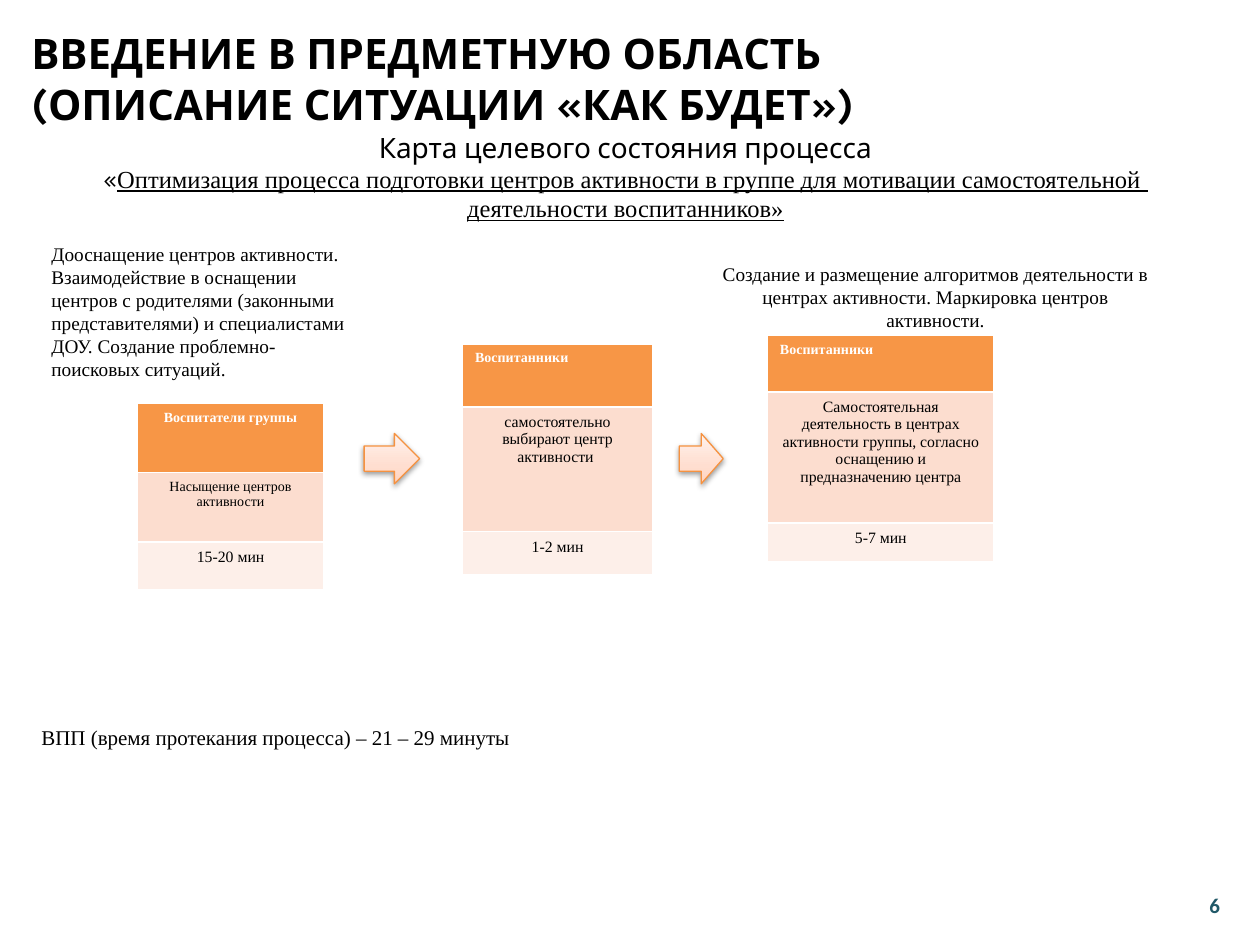
from dataclasses import dataclass

from lxml.etree import SubElement
from pptx import Presentation
from pptx.dml.color import RGBColor
from pptx.enum.shapes import MSO_SHAPE
from pptx.enum.text import MSO_ANCHOR, MSO_AUTO_SIZE, PP_ALIGN
from pptx.oxml.ns import qn
from pptx.util import Inches, Pt


@dataclass(frozen=True)
class Theme:
    heading_font: str = "Karla"
    body_font: str = "Times New Roman"
    number_font: str = "Calibri"
    text: str = "000000"
    header_text: str = "FFFFFF"
    number: str = "215968"
    row_fills: tuple = ("F79646", "FCDDCF", "FDEFE9")
    arrow_line: str = "F69240"
    arrow_stops: tuple = ((0, "FFD2BD"), (35, "FFDED0"), (100, "FFF2ED"))
    heading_size: int = 24
    title_size: int = 16
    process_size: int = 14
    total_size: int = 12
    note_size: int = 11
    cell_size: int = 9
    small_size: int = 8


THEME = Theme()
LEFT, CENTER = PP_ALIGN.LEFT, PP_ALIGN.CENTER


def inches(box):
    return [Inches(length) for length in box]


def format_run(run, size, font=THEME.body_font, color=THEME.text, bold=False, underline=None):
    run.font.size = Pt(size)
    run.font.name = font
    run.font.color.rgb = RGBColor.from_string(color)
    run.font.bold = bold
    run.font.underline = underline


def write(text_frame, text, size, align=LEFT, **style):
    """Fill a frame with one paragraph per line of text, all in one style."""
    text_frame.text = text
    for paragraph in text_frame.paragraphs:
        paragraph.alignment = align
        for run in paragraph.runs:
            format_run(run, size, **style)


def add_text(slide, box, text, size, align=LEFT, anchor=MSO_ANCHOR.TOP, **style):
    text_frame = slide.shapes.add_textbox(*inches(box)).text_frame
    text_frame.word_wrap = True
    text_frame.vertical_anchor = anchor
    write(text_frame, text, size, align, **style)
    return text_frame


def add_heading(slide, box):
    text_frame = add_text(
        slide, box, "ВВЕДЕНИЕ В ПРЕДМЕТНУЮ ОБЛАСТЬ\n(ОПИСАНИЕ СИТУАЦИИ «КАК БУДЕТ»)",
        THEME.heading_size, anchor=MSO_ANCHOR.MIDDLE, font=THEME.heading_font, bold=True)
    text_frame.margin_bottom = Inches(0.45)


def add_title(slide, box):
    title = slide.shapes.title
    title.left, title.top, title.width, title.height = inches(box)
    text_frame = title.text_frame
    text_frame.auto_size = MSO_AUTO_SIZE.NONE
    text_frame.vertical_anchor = MSO_ANCHOR.MIDDLE
    write(text_frame,
          "Карта целевого состояния процесса\n«\nдеятельности воспитанников»",
          THEME.process_size, CENTER, underline=True)
    name, process, ending = text_frame.paragraphs
    format_run(name.runs[0], THEME.title_size, THEME.heading_font)
    format_run(process.runs[0], THEME.process_size, THEME.heading_font)
    run = process.add_run()
    run.text = "Оптимизация процесса подготовки центров активности в группе для мотивации самостоятельной "
    format_run(run, THEME.process_size, underline=True)


def add_step(slide, left, top, width, heights, texts, header_align=LEFT, action_size=THEME.cell_size):
    """Place a step card: who acts, what is done, how long it takes."""
    table = slide.shapes.add_table(
        3, 1, *inches((left, top, width, sum(heights)))).table
    table.horz_banding = False
    sizes = (THEME.small_size, action_size, THEME.cell_size)
    for index, (height, text, size, fill) in enumerate(zip(heights, texts, sizes, THEME.row_fills)):
        table.rows[index].height = Inches(height)
        cell = table.cell(index, 0)
        cell.fill.solid()
        cell.fill.fore_color.rgb = RGBColor.from_string(fill)
        header = index == 0
        write(cell.text_frame, text, size, header_align if header else CENTER,
              color=THEME.header_text if header else THEME.text, bold=header)


def add_color(parent, color):
    return SubElement(parent, qn("a:srgbClr"), val=color)


def add_arrow(slide, box):
    arrow = slide.shapes.add_shape(MSO_SHAPE.RIGHT_ARROW, *inches(box))
    arrow.line.color.rgb = RGBColor.from_string(THEME.arrow_line)
    arrow.line.width = Pt(0.75)
    arrow.shadow.inherit = False
    arrow.fill.gradient()
    properties = arrow._element.spPr

    gradient = properties.find(qn("a:gradFill"))
    for child in list(gradient):
        gradient.remove(child)
    stops = SubElement(gradient, qn("a:gsLst"))
    for position, color in THEME.arrow_stops:
        add_color(SubElement(stops, qn("a:gs"), pos=str(position * 1000)), color)
    SubElement(gradient, qn("a:lin"), ang=str(270 * 60000), scaled="1")

    shadow = SubElement(properties.find(qn("a:effectLst")), qn("a:outerShdw"),
                        blurRad="40000", dist="20000", dir=str(90 * 60000), rotWithShape="0")
    SubElement(add_color(shadow, THEME.text), qn("a:alpha"), val="38000")


def add_process(slide):
    add_step(slide, 6.09, 2.66, 1.8, (0.45, 1.04, 0.31), (
        "Воспитанники",
        "Самостоятельная деятельность в центрах активности группы, "
        "согласно оснащению и предназначению центра",
        "5-7 мин"))
    add_step(slide, 3.67, 2.73, 1.51, (0.5, 0.99, 0.34), (
        "Воспитанники", "самостоятельно\nвыбирают центр активности ", "1-2 мин"))
    add_step(slide, 1.09, 3.2, 1.48, (0.55, 0.55, 0.38), (
        "Воспитатели группы", "Насыщение центров активности", "15-20 мин"),
        header_align=CENTER, action_size=THEME.small_size)
    for left, width in ((5.39, 0.35), (2.89, 0.44)):
        add_arrow(slide, (left, 3.44, width, 0.4))


def add_notes_on_steps(slide):
    add_text(slide, (0.31, 1.87, 2.66, 1.21),
             "Дооснащение центров активности. Взаимодействие в оснащении центров с родителями "
             "(законными представителями) и специалистами ДОУ. Создание проблемно- поисковых ситуаций.",
             THEME.note_size)
    add_text(slide, (5.55, 2.03, 3.75, 0.47),
             "Создание и размещение алгоритмов деятельности в центрах активности. "
             "Маркировка центров активности.",
             THEME.note_size, CENTER)


def main():
    presentation = Presentation()
    presentation.slide_width, presentation.slide_height = Inches(10), Inches(7.5)
    slide = presentation.slides.add_slide(presentation.slide_layouts.get_by_name("Title Only"))
    add_title(slide, (0.16, 0.94, 9.61, 0.92))
    add_text(slide, (9.45, 7.03, 0.38, 0.31), "6", THEME.total_size, CENTER, MSO_ANCHOR.MIDDLE,
             font=THEME.number_font, color=THEME.number, bold=True)
    add_heading(slide, (0.15, 0.36, 9.5, 0.92))
    add_text(slide, (0.23, 5.7, 5.04, 0.5),
             "ВПП (время протекания процесса) – 21 – 29 минуты", THEME.total_size)
    add_process(slide)
    add_notes_on_steps(slide)
    presentation.save("out.pptx")


if __name__ == "__main__":
    main()
